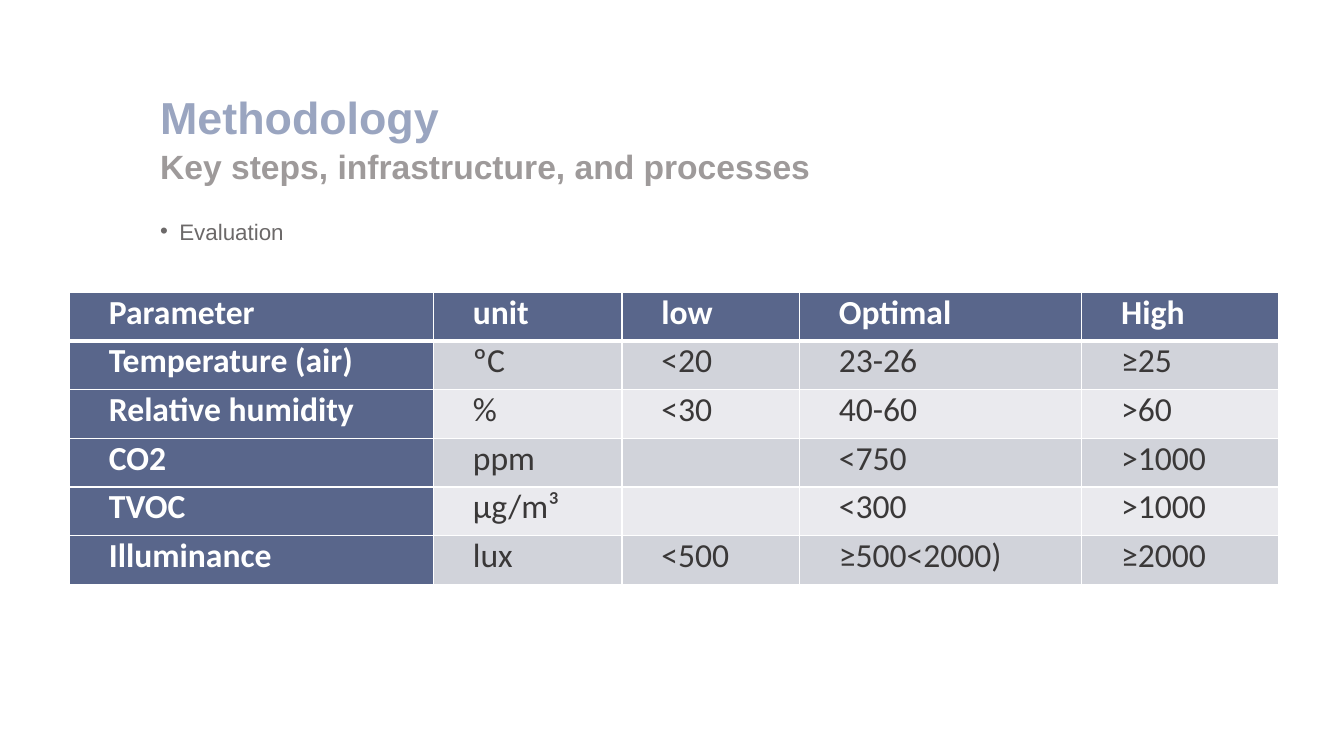
from dataclasses import dataclass

import lxml.etree
import pptx
import pptx.dml.color
import pptx.enum.text
import pptx.oxml.ns
import pptx.util

Inches = pptx.util.Inches
Pt = pptx.util.Pt
RGBColor = pptx.dml.color.RGBColor
Align = pptx.enum.text.PP_ALIGN
qn = pptx.oxml.ns.qn

WHITE = RGBColor(0xFF, 0xFF, 0xFF)
TITLE_BLUE = RGBColor(0x9A, 0xA5, 0xC0)
SUBTITLE_GREY = RGBColor(0x9E, 0x9A, 0x9A)
BULLET_GREY = RGBColor(0x6C, 0x69, 0x69)
HEADER_BLUE = RGBColor(0x59, 0x66, 0x8B)
BAND_DARK = RGBColor(0xD1, 0xD3, 0xDA)
BAND_LIGHT = RGBColor(0xEA, 0xEA, 0xEE)
VALUE_GREY = RGBColor(0x3A, 0x38, 0x38)


@dataclass
class Style:
    font: str
    size: float
    color: RGBColor
    bold: bool = False


@dataclass
class TextBlock:
    text: str
    top: float
    width: float
    height: float
    style: Style
    line_spacing: float = 0.9
    bulleted: bool = False


TEXT_LEFT = 1.49
TEXT_BLOCKS = [
    TextBlock("Methodology", 0.9, 9.53, 0.54, Style("Arial", 32, TITLE_BLUE, True)),
    TextBlock("Key steps, infrastructure, and processes", 1.44, 9.53, 0.31,
              Style("Arial", 24, SUBTITLE_GREY, True)),
    TextBlock("Evaluation", 1.98, 10.39, 4.74, Style("Arial", 16, BULLET_GREY),
              line_spacing=1.5, bulleted=True),
]

HEADING_STYLE = Style("Calibri", 24, WHITE, True)
VALUE_STYLE = Style("Calibri", 24, VALUE_GREY)
COLUMN_WIDTHS = [3.61, 1.87, 1.76, 2.8, 1.95]
ROW_HEIGHT = 0.483
THRESHOLDS = [
    ["Parameter", "unit", "low", "Optimal", "High"],
    ["Temperature (air)", "ºC", "<20", "23-26", "≥25"],
    ["Relative humidity", "%", "<30", "40-60", ">60"],
    ["CO2", "ppm", "", "<750", ">1000"],
    ["TVOC", "µg/m³", "", "<300", ">1000"],
    ["Illuminance", "lux", "<500", "≥500<2000)", "≥2000"],
]


def add_run(paragraph, text: str, style: Style) -> None:
    run = paragraph.add_run()
    run.text = text
    run.font.name = style.font
    run.font.size = Pt(style.size)
    run.font.bold = style.bold
    run.font.color.rgb = style.color


def set_indent(paragraph, margin: float, first_line: float):
    properties = paragraph._p.get_or_add_pPr()
    properties.set("marL", str(Inches(margin)))
    properties.set("indent", str(Inches(first_line)))
    return properties


def add_text_block(slide, block: TextBlock) -> None:
    frame = slide.shapes.add_textbox(
        Inches(TEXT_LEFT), Inches(block.top), Inches(block.width), Inches(block.height)
    ).text_frame
    frame.word_wrap = True
    paragraph = frame.paragraphs[0]
    paragraph.line_spacing = block.line_spacing
    paragraph.space_before = Pt(10)
    if block.bulleted:
        paragraph.alignment = Align.JUSTIFY
        properties = set_indent(paragraph, 0.19, -0.19)
        lxml.etree.SubElement(properties, qn("a:buFont"), typeface="Arial")
        lxml.etree.SubElement(properties, qn("a:buChar"), char="•")
    add_run(paragraph, block.text, block.style)


def set_border(cell, side: str, width: float) -> None:
    line = lxml.etree.SubElement(
        cell._tc.get_or_add_tcPr(), qn(f"a:ln{side}"), w=str(Pt(width))
    )
    fill = lxml.etree.SubElement(line, qn("a:solidFill"))
    lxml.etree.SubElement(fill, qn("a:srgbClr"), val=str(WHITE))


def fill_cell(cell, text: str, row: int, column: int) -> None:
    is_heading = row == 0 or column == 0
    # Borders: a thicker rule separates the header row
    rules = {"L": 1, "R": 1, "T": 3 if row == 1 else 1, "B": 3 if row == 0 else 1}
    for side, width in rules.items():
        set_border(cell, side, width)
    cell.fill.solid()
    band = BAND_DARK if row % 2 else BAND_LIGHT
    cell.fill.fore_color.rgb = HEADER_BLUE if is_heading else band
    cell.margin_left = cell.margin_right = Inches(0.15)
    cell.margin_top = cell.margin_bottom = 0
    if text:
        paragraph = cell.text_frame.paragraphs[0]
        paragraph.alignment = Align.JUSTIFY
        set_indent(paragraph, 0, 0.24)
        add_run(paragraph, text, HEADING_STYLE if is_heading else VALUE_STYLE)


def add_threshold_table(slide) -> None:
    table = slide.shapes.add_table(
        len(THRESHOLDS), len(COLUMN_WIDTHS), Inches(0.69), Inches(2.9),
        Inches(sum(COLUMN_WIDTHS)), Inches(ROW_HEIGHT * len(THRESHOLDS))
    ).table
    table.first_col = True
    for column, width in zip(table.columns, COLUMN_WIDTHS):
        column.width = Inches(width)
    for row, texts in enumerate(THRESHOLDS):
        for column, text in enumerate(texts):
            fill_cell(table.cell(row, column), text, row, column)


def main() -> None:
    presentation = pptx.Presentation()
    presentation.slide_width = Inches(13.33)
    presentation.slide_height = Inches(7.5)
    slide = presentation.slides.add_slide(presentation.slide_layouts[6])

    # Headings and bullet
    for block in TEXT_BLOCKS:
        add_text_block(slide, block)

    # Evaluation thresholds
    add_threshold_table(slide)

    presentation.save("out.pptx")


if __name__ == "__main__":
    main()
